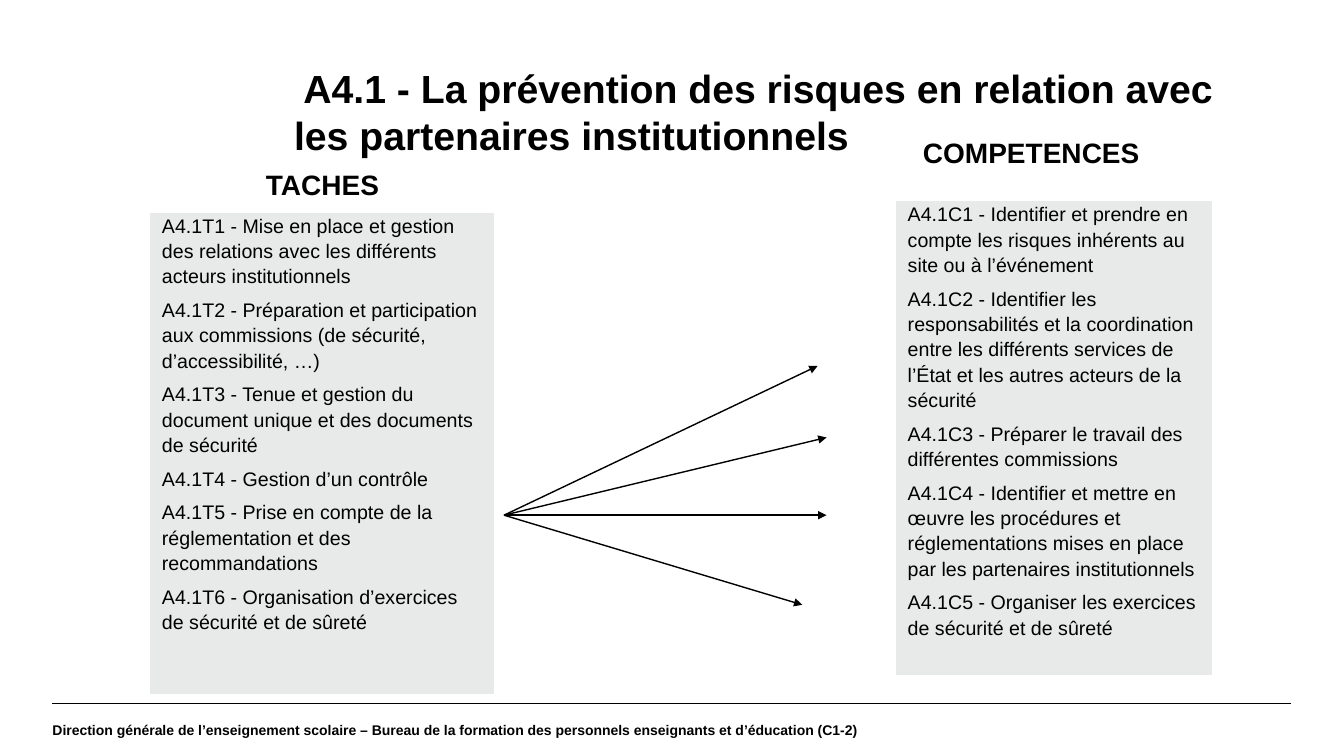
from lxml import etree
from pptx import Presentation
from pptx.dml.color import RGBColor
from pptx.enum.shapes import MSO_CONNECTOR
from pptx.enum.text import MSO_ANCHOR, PP_ALIGN
from pptx.oxml.ns import qn
from pptx.util import Pt

LEFT, CENTER = PP_ALIGN.LEFT, PP_ALIGN.CENTER
TOP, MIDDLE = MSO_ANCHOR.TOP, MSO_ANCHOR.MIDDLE
STRAIGHT = MSO_CONNECTOR.STRAIGHT
FONT = "Arial"
COLORS = {"ink": "000000", "panel": "E7EAE9", "edge": "FFFFFF"}

TITLE = "A4.1 - La prévention des risques en relation avec les partenaires institutionnels"
FOOTER = ("Direction générale de l’enseignement scolaire – Bureau de la formation "
          "des personnels enseignants et d’éducation (C1-2)")
TASKS = [
    "A4.1T1 - Mise en place et gestion des relations avec les différents acteurs institutionnels",
    "A4.1T2 - Préparation et participation aux commissions (de sécurité, d’accessibilité, …)",
    "A4.1T3 - Tenue et gestion du document unique et des documents de sécurité",
    "A4.1T4 - Gestion d’un contrôle",
    "A4.1T5 - Prise en compte de la réglementation et des recommandations",
    "A4.1T6 - Organisation d’exercices de sécurité et de sûreté",
]
SKILLS = [
    "A4.1C1 - Identifier et prendre en compte les risques inhérents au site ou à l’événement",
    "A4.1C2 - Identifier les responsabilités et la coordination entre les différents services "
    "de l’État et les autres acteurs de la sécurité",
    "A4.1C3 - Préparer le travail des différentes commissions",
    "A4.1C4 - Identifier et mettre en œuvre les procédures et réglementations mises en place "
    "par les partenaires institutionnels",
    "A4.1C5 - Organiser les exercices de sécurité et de sûreté",
]
PANELS = [
    (TASKS, (106.7, 151.4, 246.9, 344.5)),
    (SKILLS, (639.4, 143.3, 226.8, 339)),
]
HEADS = [
    ("TACHES", (147.6, 115.9, 165.6, 31.7)),
    ("COMPETENCES", (639.4, 93.6, 194.4, 31.7)),
]
HUB = (360, 368)
TIPS = [(584, 261.4), (590.4, 312.5), (590.4, 368), (573.1, 432)]
RULE = ((37.5, 502.6), (922.3, 502.6))


def color(name):
    return RGBColor.from_string(COLORS[name])


def style(para, size, bold=False):
    for run in para.runs:
        run.font.name = FONT
        run.font.size = Pt(size)
        run.font.bold = bold
        run.font.color.rgb = color("ink")


def add_text(slide, text, box, size, align=LEFT, anchor=TOP, pad=(7.2, 3.6), indent=0):
    frame = slide.shapes.add_textbox(*map(Pt, box)).text_frame
    frame.word_wrap = True
    frame.vertical_anchor = anchor
    frame.margin_left = frame.margin_right = Pt(pad[0])
    frame.margin_top = frame.margin_bottom = Pt(pad[1])
    frame.text = text
    para = frame.paragraphs[0]
    para.alignment = align
    if indent:
        props = para._p.get_or_add_pPr()
        props.set("marL", "0")
        props.set("indent", str(Pt(indent)))
    style(para, size, True)


def add_line(slide, start, end, width, arrow=False):
    line = slide.shapes.add_connector(STRAIGHT, *map(Pt, start + end))
    line.line.width = Pt(width)
    line.line.color.rgb = color("ink")
    if arrow:
        etree.SubElement(line.line._get_or_add_ln(), qn("a:tailEnd"), type="triangle")
    etree.SubElement(line._element.spPr, qn("a:effectLst"))


def add_panel(slide, items, box):
    table = slide.shapes.add_table(1, 1, *map(Pt, box)).table
    table.first_row = table.horz_banding = False
    cell = table.cell(0, 0)
    cell.margin_left = cell.margin_right = Pt(9)
    cell.margin_top = cell.margin_bottom = 0
    props = cell._tc.get_or_add_tcPr()
    for side in ("lnL", "lnR", "lnT", "lnB"):
        edge = etree.SubElement(props, qn("a:" + side), w=str(Pt(1)))
        paint = etree.SubElement(edge, qn("a:solidFill"))
        etree.SubElement(paint, qn("a:srgbClr"), val=COLORS["edge"])
    cell.fill.solid()
    cell.fill.fore_color.rgb = color("panel")
    cell.text_frame.text = "\n".join(items)
    for para in cell.text_frame.paragraphs:
        para.line_spacing = 1.15
        para.space_after = Pt(6)
        style(para, 14)


def main():
    """Build the slide on tasks and skills for risk prevention."""
    deck = Presentation()
    deck.slide_width, deck.slide_height = Pt(960), Pt(540)
    slide = deck.slides.add_slide(deck.slide_layouts[6])
    add_line(slide, *RULE, 0.8)
    add_text(slide, FOOTER, (37.5, 502.6, 895.7, 37.4), 10, anchor=MIDDLE, pad=(0, 0))
    add_text(slide, TITLE, (203, 42.5, 699.8, 74.9), 28, indent=6.67)
    for items, box in PANELS:
        add_panel(slide, items, box)
    for tip in TIPS:
        add_line(slide, HUB, tip, 1, arrow=True)
    for text, box in HEADS:
        add_text(slide, text, box, 20, align=CENTER)
    deck.save("out.pptx")


if __name__ == "__main__":
    main()
